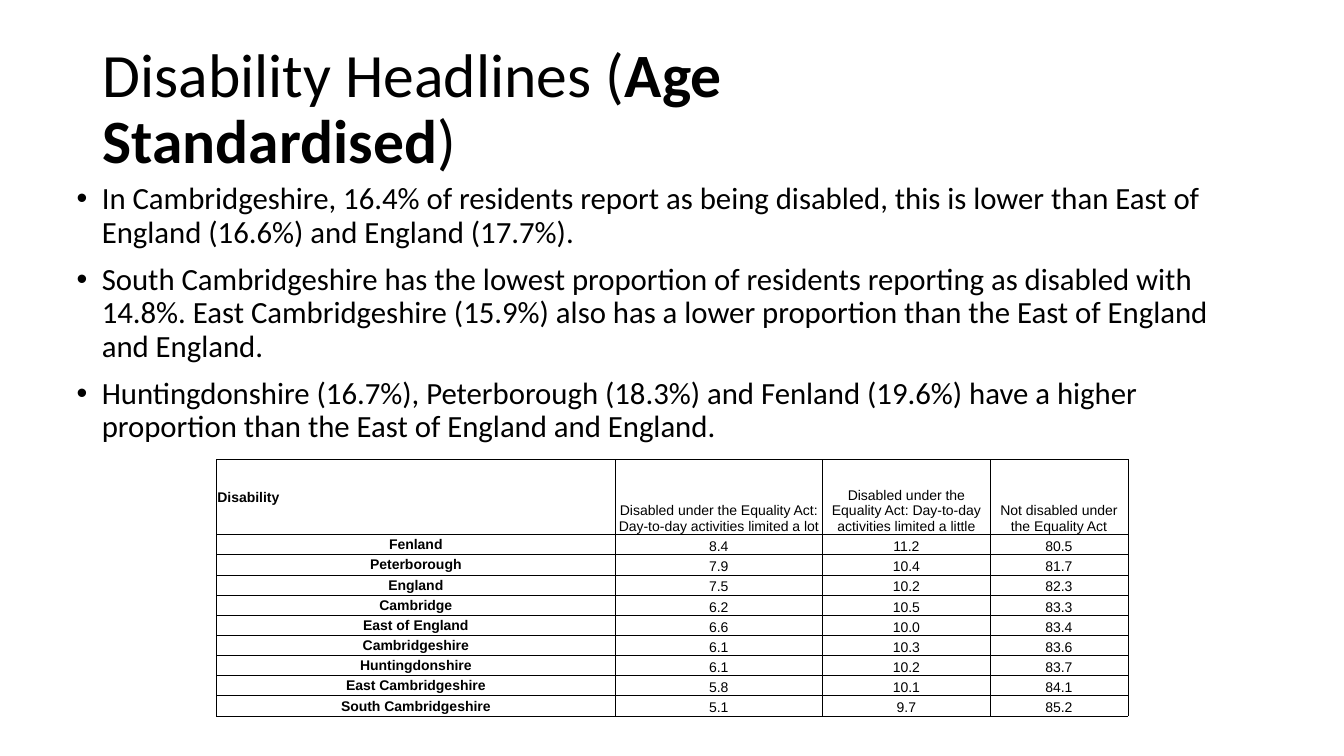
from lxml import etree
from pptx import Presentation
from pptx.dml.color import RGBColor
from pptx.enum.text import MSO_ANCHOR, MSO_AUTO_SIZE, PP_ALIGN
from pptx.oxml.ns import qn
from pptx.util import Pt

LEFT, CENTER = PP_ALIGN.LEFT, PP_ALIGN.CENTER
TOP, MIDDLE, BOTTOM = MSO_ANCHOR.TOP, MSO_ANCHOR.MIDDLE, MSO_ANCHOR.BOTTOM
NO_AUTOFIT = MSO_AUTO_SIZE.NONE

COLORS = {"text": "000000", "border": "000000"}
TEXT_FONT, TABLE_FONT = "Calibri", "Arial"

TITLE_RUNS = [
    ("Disability Headlines (", False),
    ("Age Standardised", True),
    (")", False),
]

HEADLINES = [
    "In Cambridgeshire, 16.4% of residents report as being disabled, this is "
    "lower than East of England (16.6%) and England (17.7%).",
    "South Cambridgeshire has the lowest proportion of residents reporting as "
    "disabled with 14.8%. East Cambridgeshire (15.9%) also has a lower "
    "proportion than the East of England and England.",
    "Huntingdonshire (16.7%), Peterborough (18.3%) and Fenland (19.6%) have a "
    "higher proportion than the East of England and England.",
]

DISABILITY_ROWS = [
    ("Disability",
     "Disabled under the Equality Act: Day-to-day activities limited a lot",
     "Disabled under the Equality Act: Day-to-day activities limited a little",
     "Not disabled under the Equality Act"),
    ("Fenland", "8.4", "11.2", "80.5"),
    ("Peterborough", "7.9", "10.4", "81.7"),
    ("England", "7.5", "10.2", "82.3"),
    ("Cambridge", "6.2", "10.5", "83.3"),
    ("East of England", "6.6", "10.0", "83.4"),
    ("Cambridgeshire", "6.1", "10.3", "83.6"),
    ("Huntingdonshire", "6.1", "10.2", "83.7"),
    ("East Cambridgeshire", "5.8", "10.1", "84.1"),
    ("South Cambridgeshire", "5.1", "9.7", "85.2"),
]
COLUMN_WIDTHS = [284.4, 148.5, 119.5, 98.5]
HEADER_HEIGHT, ROW_HEIGHT = 53.5, 14.4


def place(holder, left, top, width, height, anchor):
    holder.left, holder.top = Pt(left), Pt(top)
    holder.width, holder.height = Pt(width), Pt(height)
    frame = holder.text_frame
    frame.word_wrap = True
    frame.auto_size = NO_AUTOFIT
    frame.vertical_anchor = anchor
    return frame


def style(paragraph, font_name, size, bold=False, align=LEFT):
    paragraph.alignment = align
    font = paragraph.font
    font.name, font.size, font.bold = font_name, Pt(size), bold
    font.color.rgb = RGBColor.from_string(COLORS["text"])


def add_bullet(paragraph, indent):
    properties = paragraph._p.get_or_add_pPr()
    properties.set("marL", str(Pt(indent)))
    properties.set("indent", str(-Pt(indent)))
    etree.SubElement(properties, qn("a:buFont"), typeface="Arial")
    etree.SubElement(properties, qn("a:buChar"), char="•")


def add_title(slide):
    frame = place(slide.shapes.title, 66.2, 24.5, 545.8, 108.7, MIDDLE)
    heading = frame.paragraphs[0]
    heading.line_spacing = 0.9
    style(heading, TEXT_FONT, 44)
    for text, bold in TITLE_RUNS:
        run = heading.add_run()
        run.text = text
        run.font.bold = bold


def add_headlines(slide):
    frame = place(slide.placeholders[1], 47.5, 127.4, 846.7, 182.9, TOP)
    for index, text in enumerate(HEADLINES):
        headline = frame.add_paragraph() if index else frame.paragraphs[0]
        headline.text = text
        add_bullet(headline, 18)
        headline.line_spacing = 0.9
        headline.space_before = Pt(10 if index else 0)
        style(headline, TEXT_FONT, 22)


def add_borders(cell):
    properties = cell._tc.get_or_add_tcPr()
    for side in ("lnL", "lnR", "lnT", "lnB"):
        line = etree.SubElement(properties, qn(f"a:{side}"), w=str(Pt(0.5)))
        fill = etree.SubElement(line, qn("a:solidFill"))
        etree.SubElement(fill, qn("a:srgbClr"), val=COLORS["border"])


def fill_cell(cell, text, is_label, align):
    cell.margin_left = cell.margin_right = cell.margin_top = Pt(0.5)
    cell.margin_bottom = 0
    cell.vertical_anchor = MIDDLE if is_label else BOTTOM
    add_borders(cell)
    cell.fill.background()
    entry = cell.text_frame.paragraphs[0]
    entry.text = text
    style(entry, TABLE_FONT, 10, is_label, align)


def add_disability_table(slide):
    heights = [HEADER_HEIGHT] + [ROW_HEIGHT] * (len(DISABILITY_ROWS) - 1)
    table = slide.shapes.add_table(
        len(heights), len(COLUMN_WIDTHS), Pt(154.8), Pt(328.3),
        Pt(sum(COLUMN_WIDTHS)), Pt(sum(heights))).table
    table.first_row = table.horz_banding = False
    for column, width in zip(table.columns, COLUMN_WIDTHS):
        column.width = Pt(width)
    for r, (height, values) in enumerate(zip(heights, DISABILITY_ROWS)):
        table.rows[r].height = Pt(height)
        for c, text in enumerate(values):
            align = LEFT if r == c == 0 else CENTER
            fill_cell(table.cell(r, c), text, c == 0, align)


def main():
    deck = Presentation()
    deck.slide_width, deck.slide_height = Pt(960), Pt(540)
    slide = deck.slides.add_slide(deck.slide_layouts[1])

    # Title and key findings
    add_title(slide)
    add_headlines(slide)

    # Proportions by area
    add_disability_table(slide)

    deck.save("out.pptx")


if __name__ == "__main__":
    main()
